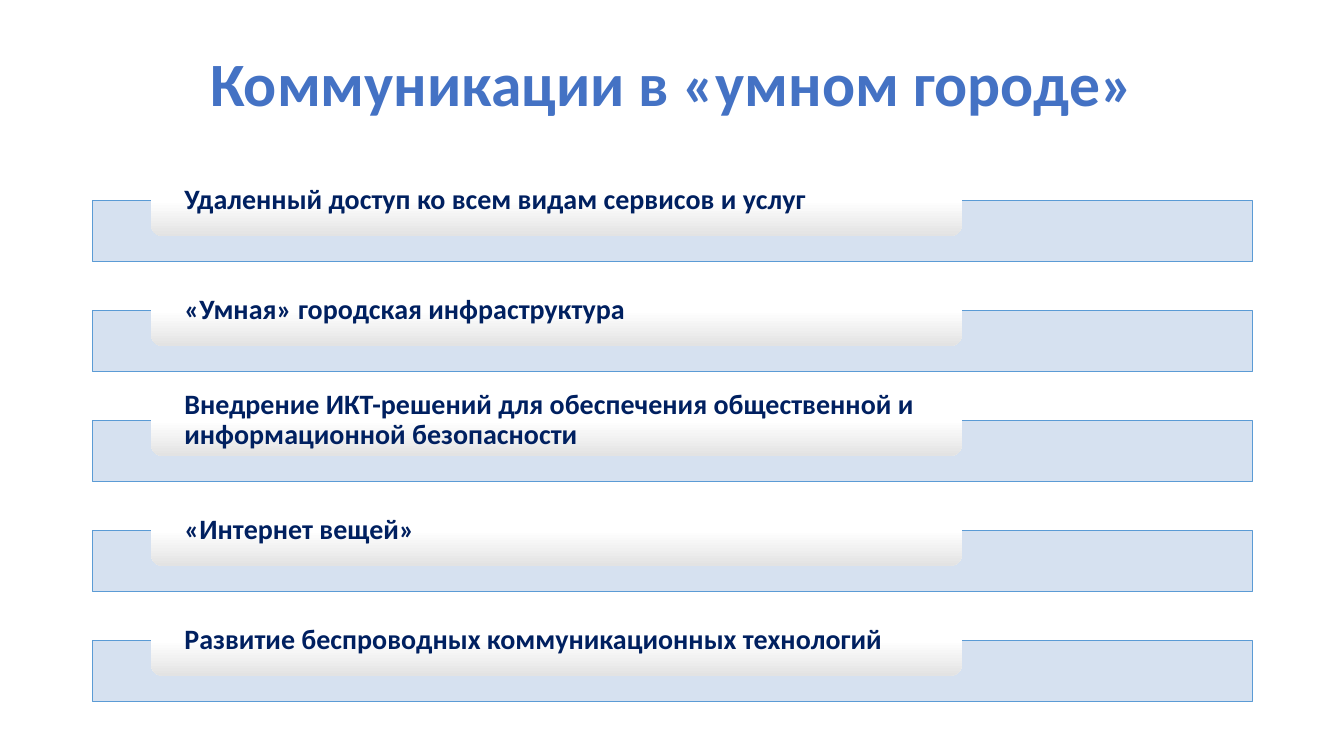
from lxml.etree import SubElement as Sub
from pptx import Presentation
from pptx.dml.color import RGBColor
from pptx.enum.shapes import MSO_SHAPE as Shape
from pptx.enum.text import MSO_ANCHOR as Anchor, PP_ALIGN as Align
from pptx.oxml.ns import qn
from pptx.util import Cm, Pt

TOPICS = [
    "Удаленный доступ ко всем видам сервисов и услуг",
    "«Умная» городская инфраструктура",
    "Внедрение ИКТ-решений для обеспечения общественной и информационной безопасности",
    "«Интернет вещей»",
    "Развитие беспроводных коммуникационных технологий",
]
LEFT, WIDTH, STEP = 2.34, 29.21, 2.77


def paint(color, code):
    color.rgb = RGBColor.from_string(code)


def write(frame, text, size, code, align):
    frame.word_wrap = True
    frame.vertical_anchor = Anchor.MIDDLE
    para = frame.paragraphs[0]
    para.alignment = align
    para.line_spacing = 0.9
    run = para.add_run()
    run.text = text
    font = run.font
    font.name, font.size, font.bold = "Calibri", Pt(size), True
    paint(font.color, code)
    return run


def add_title(slide, text):
    box = slide.shapes.add_textbox(Cm(LEFT), Cm(1.02), Cm(WIDTH), Cm(2.34))
    run = write(box.text_frame, text, 44, "4472C4", Align.CENTER)
    props = run.font._element
    edge = Sub(props, qn("a:ln"), w=str(Pt(0.75)))
    fill = Sub(edge, qn("a:solidFill"))
    Sub(fill, qn("a:srgbClr"), val="FFFFFF")
    props.insert(0, edge)


def add_bar(slide, top):
    bar = slide.shapes.add_shape(
        Shape.RECTANGLE, Cm(LEFT), Cm(top), Cm(WIDTH), Cm(1.55))
    bar.shadow.inherit = False
    bar.fill.solid()
    paint(bar.fill.fore_color, "D2DEEF")
    tint = bar._element.spPr.find(qn("a:solidFill"))[0]
    Sub(tint, qn("a:alpha"), val="90000")
    paint(bar.line.color, "5B9BD5")
    bar.line.width = Pt(0.5)


def add_label(slide, top, text):
    label = slide.shapes.add_shape(
        Shape.ROUNDED_RECTANGLE, Cm(3.8), Cm(top), Cm(20.45), Cm(1.8))
    label.shadow.inherit = False
    label.line.fill.background()
    label.fill.gradient()
    label.fill.gradient_angle = 270
    shades = [(0.5, "FFFFFF"), (1, "E3E3E3")]
    for stop, (place, code) in zip(label.fill.gradient_stops, shades):
        stop.position = place
        paint(stop.color, code)
    frame = label.text_frame
    frame.margin_left = frame.margin_right = Cm(0.76)
    frame.margin_top = frame.margin_bottom = 0
    write(frame, text, 20, "002060", Align.LEFT)


def main():
    deck = Presentation()
    deck.slide_width, deck.slide_height = Cm(33.87), Cm(19.05)
    slide = deck.slides.add_slide(deck.slide_layouts[6])
    add_title(slide, "Коммуникации в «умном городе»")
    for row, topic in enumerate(TOPICS):
        add_bar(slide, 5.05 + row * STEP)
        add_label(slide, 4.15 + row * STEP, topic)
    deck.save("out.pptx")


if __name__ == "__main__":
    main()
